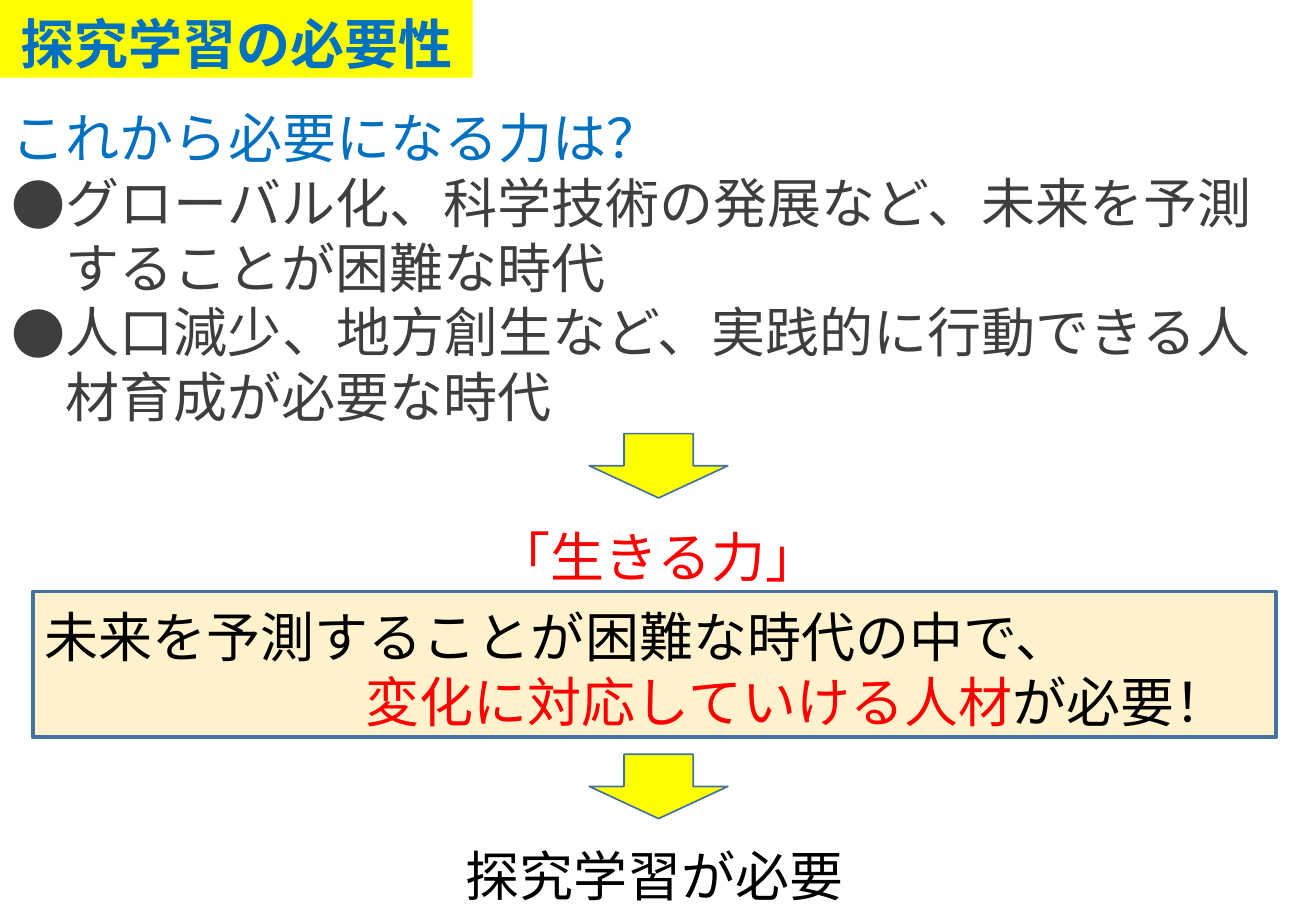
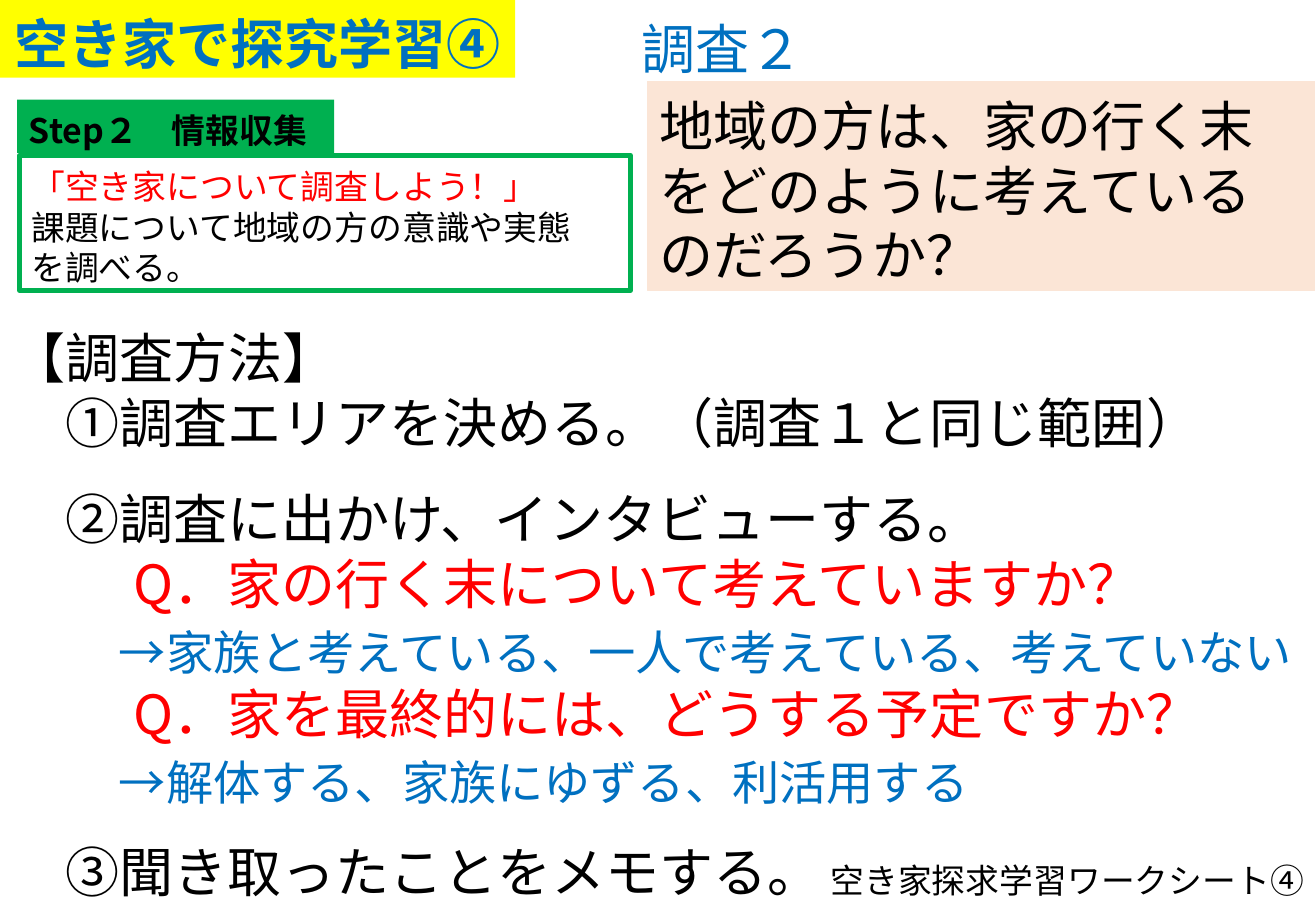
from lxml.etree import SubElement
from pptx import Presentation
from pptx.dml.color import RGBColor
from pptx.enum.shapes import MSO_SHAPE
from pptx.enum.text import MSO_ANCHOR, PP_ALIGN
from pptx.oxml.ns import qn
from pptx.util import Pt

PX = 9144
WIDE, HIGH = 1083, 750
FONT = "Noto Sans CJK JP"
BIG, MID, SMALL = 32, 28, 20
LEAD = 1.2
EM = 44
ASK = 100

HUES = {
    "yellow": "FFFF00", "blue": "0070C0", "gray": "3E3E3E", "edge": "43739E",
    "red": "FF0000", "black": "000000", "cream": "FFF2CC", "green": "00B050",
    "peach": "FBE5D6",
}
ALIGN = {"left": PP_ALIGN.LEFT, "mid": PP_ALIGN.CENTER, "right": PP_ALIGN.RIGHT}


def line(text, hue="black", size=BIG, **look):
    return {"runs": [(text, hue)], "size": size, **look}


NEED = {
    "title": ("探究学習の必要性", 389),
    "arrows": [357, 621],
    "boxes": [
        {"at": (0, 78, WIDE, 279), "text": [
            line("これから必要になる力は？", "blue"),
            line("グローバル化、科学技術の発展など、未来を予測することが困難な時代", "gray", dot=True),
            line("人口減少、地方創生など、実践的に行動できる人材育成が必要な時代", "gray", dot=True),
        ]},
        {"at": (0, 423, WIDE, 64), "text": [line("「生きる力」", "red", align="mid")]},
        {"at": (27, 487, 1023, 120), "fill": "cream", "edge": ("edge", 2.25), "text": [
            line("未来を予測することが困難な時代の中で、"),
            {"runs": [("変化に対応していける人材", "red"), ("が必要！", "black")],
             "size": BIG, "left": 6 * EM},
        ]},
        {"at": (-3, 686, WIDE, 64), "text": [line("探究学習が必要", align="mid")]},
    ],
}

SURVEY = {
    "title": ("空き家で探究学習④", 424),
    "arrows": [],
    "boxes": [
        {"at": (14, 82, 261, 44), "fill": "green", "text": [
            line("Step２　情報収集", size=SMALL, bold=True)]},
        {"at": (16, 128, 503, 111), "edge": ("green", 3), "text": [
            line("「空き家について調査しよう！」", "red", SMALL),
            line("課題について地域の方の意識や実態", size=SMALL),
            line("を調べる。", size=SMALL),
        ]},
        {"at": (518, 5, 563, 64), "text": [line("調査２", "blue")]},
        {"at": (533, 67, 549, 172), "fill": "peach", "edge": ("peach", 0.75), "text": [
            line("地域の方は、家の行く末をどのように考えているのだろうか？")]},
        {"at": (0, 259, 1082, 491), "text": [
            line("【調査方法】"),
            line("①調査エリアを決める。（調査１と同じ範囲）", left=EM),
            line("②調査に出かけ、インタビューする。", left=EM, gap=19),
            line("Q．家の行く末について考えていますか？", "red", left=ASK),
            line("→家族と考えている、一人で考えている、考えていない", "blue", MID, left=2 * EM, lead=BIG),
            line("Q．家を最終的には、どうする予定ですか？", "red", left=ASK),
            line("→解体する、家族にゆずる、利活用する", "blue", MID, left=2 * EM, lead=BIG),
            line("③聞き取ったことをメモする。", left=EM, gap=17),
        ]},
        {"at": (671, 700, 412, 44), "text": [
            line("空き家探求学習ワークシート④", size=SMALL, align="right", font="Calibri")]},
    ],
}


def tint(hue):
    return RGBColor.from_string(HUES[hue])


def scale(at):
    return [v * PX for v in at]


def paint(shape, fill=None, edge=None):
    shape.shadow.inherit = False
    if fill:
        shape.fill.solid()
        shape.fill.fore_color.rgb = tint(fill)
    else:
        shape.fill.background()
    if edge:
        shape.line.color.rgb = tint(edge[0])
        shape.line.width = Pt(edge[1])
    else:
        shape.line.fill.background()


def write(para, row):
    size = row["size"]
    para.alignment = ALIGN[row.get("align", "left")]
    para.line_spacing = Pt(row.get("lead", size) * LEAD)
    para.space_before = Pt(row.get("gap", 0))
    dot = row.get("dot", False)
    props = para._p.get_or_add_pPr()
    props.set("marL", str((EM if dot else row.get("left", 0)) * PX))
    props.set("indent", str(-EM * PX if dot else 0))
    if dot:
        SubElement(props, qn("a:buFont")).set("typeface", FONT)
        SubElement(props, qn("a:buChar")).set("char", "●")
    for text, hue in row["runs"]:
        run = para.add_run()
        run.text = text
        font = run.font
        font.size = Pt(size)
        font.bold = row.get("bold", False)
        font.color.rgb = tint(hue)
        font.name = row.get("font", FONT)
        SubElement(run._r.get_or_add_rPr(), qn("a:ea")).set("typeface", FONT)


def add_box(slide, at, text, fill=None, edge=None):
    if fill or edge:
        shape = slide.shapes.add_shape(MSO_SHAPE.RECTANGLE, *scale(at))
        paint(shape, fill, edge)
        anchor = MSO_ANCHOR.MIDDLE
    else:
        shape = slide.shapes.add_textbox(*scale(at))
        anchor = MSO_ANCHOR.TOP
    frame = shape.text_frame
    frame.word_wrap = True
    frame.vertical_anchor = anchor
    frame.margin_left = frame.margin_right = 10 * PX
    frame.margin_top, frame.margin_bottom = 8 * PX, 2 * PX
    for i, row in enumerate(text):
        write(frame.add_paragraph() if i else frame.paragraphs[0], row)


def add_page(deck, page):
    slide = deck.slides.add_slide(deck.slide_layouts[6])
    title, width = page["title"]
    add_box(slide, (0, 0, width, 64), [line(title, "blue", bold=True, align="mid")], "yellow")
    for box in page["boxes"]:
        add_box(slide, **box)
    for top in page["arrows"]:
        arrow = slide.shapes.add_shape(MSO_SHAPE.DOWN_ARROW, *scale((485, top, 114, 53)))
        paint(arrow, "yellow", ("edge", 1))


def main():
    deck = Presentation()
    deck.slide_width, deck.slide_height = scale((WIDE, HIGH))
    for page in (NEED, SURVEY):
        add_page(deck, page)
    deck.save("out.pptx")


if __name__ == "__main__":
    main()
